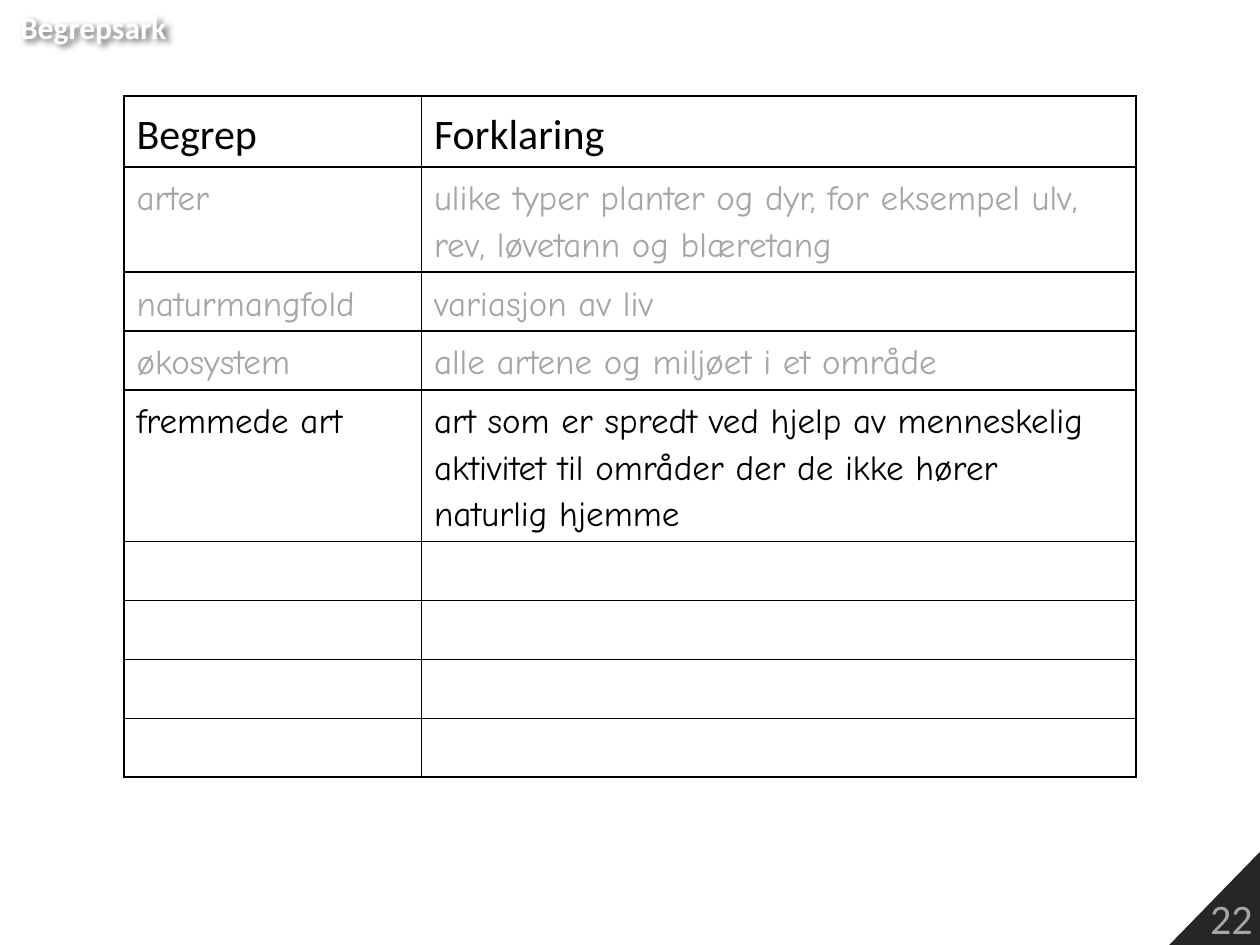
"""Build a glossary sheet with a two-column table of terms and a page-number corner."""
import dataclasses

import pptx
import pptx.dml.color
import pptx.enum.text
import pptx.oxml
import pptx.oxml.ns
import pptx.util

Pt = pptx.util.Pt
Align = pptx.enum.text.PP_ALIGN
Anchor = pptx.enum.text.MSO_ANCHOR


@dataclasses.dataclass(frozen=True)
class Theme:
    black: str = "000000"
    white: str = "FFFFFF"
    muted: str = "A6A6A6"
    corner: str = "262626"
    heading_font: str = "Calibri"
    body_font: str = "Comic Neue"
    heading_size: int = 24
    body_size: int = 20
    title_size: int = 18
    border: int = 1


THEME = Theme()
HEADER = ("Begrep", "Forklaring")
KNOWN_TERMS = [
    ("arter", "ulike typer planter og dyr, for eksempel ulv, rev, løvetann og blæretang"),
    ("naturmangfold", "variasjon av liv"),
    ("økosystem", "alle artene og miljøet i et område"),
]
NEW_TERMS = [
    ("fremmede art", "art som er spredt ved hjelp av menneskelig aktivitet "
                     "til områder der de ikke hører naturlig hjemme"),
]
EMPTY_ROWS = 4
COLUMN_WIDTHS = (170, 408.4)
ROW_HEIGHTS = [40.6, 60.2, 33.7, 33.7, 86.5] + [33.7] * EMPTY_ROWS
HEADER_CELL = {"vertical_anchor": Anchor.MIDDLE}
TERM_CELL = {"vertical_anchor": Anchor.TOP, "margin_bottom": Pt(0), "margin_right": Pt(10)}


def rgb(value):
    return pptx.dml.color.RGBColor.from_string(value)


def set_attributes(target, values):
    for name, value in values.items():
        setattr(target, name, value)


def write_text(frame, text, font, size, color, bold=False, **paragraph_format):
    para = frame.paragraphs[0]
    set_attributes(para, paragraph_format)
    span = para.add_run()
    span.text = text
    set_attributes(span.font, {"name": font, "size": Pt(size), "bold": bold})
    span.font.color.rgb = rgb(color)


def add_soft_shadow(box):
    box.fill.background()
    box.line.fill.background()
    box._element.spPr.append(pptx.oxml.parse_xml(
        f'<a:effectLst {pptx.oxml.ns.nsdecls("a")}>'
        '<a:outerShdw blurRad="50800" dist="38100" dir="2700000" algn="tl" rotWithShape="0">'
        f'<a:srgbClr val="{THEME.black}"><a:alpha val="60000"/></a:srgbClr>'
        '</a:outerShdw></a:effectLst>'))


def add_title(page, text):
    title = page.shapes.title
    set_attributes(title, {"left": Pt(4.3), "top": Pt(0.7),
                           "width": Pt(98.6), "height": Pt(29)})
    set_attributes(title.text_frame, {
        "word_wrap": False, "vertical_anchor": Anchor.TOP,
        "auto_size": pptx.enum.text.MSO_AUTO_SIZE.SHAPE_TO_FIT_TEXT})
    write_text(title.text_frame, text, THEME.heading_font, THEME.title_size,
               THEME.white, bold=True, alignment=Align.LEFT)
    add_soft_shadow(title)


def add_page_corner(page, number):
    left, top, right, bottom = 666, 483.8, 722.9, 542.2
    builder = page.shapes.build_freeform(Pt(left), Pt(bottom))
    builder.add_line_segments([(Pt(right), Pt(top)), (Pt(right), Pt(bottom))])
    corner = builder.convert_to_shape()
    corner.shadow.inherit = False
    corner.fill.solid()
    corner.fill.fore_color.rgb = rgb(THEME.corner)
    corner.line.fill.background()
    set_attributes(corner.text_frame, {"word_wrap": True, "vertical_anchor": Anchor.BOTTOM})
    write_text(corner.text_frame, number, THEME.heading_font, THEME.heading_size,
               THEME.muted, alignment=Align.RIGHT)


def draw_borders(cell):
    properties = cell._tc.get_or_add_tcPr()
    for side in ("lnL", "lnR", "lnT", "lnB"):
        properties.append(pptx.oxml.parse_xml(
            f'<a:{side} {pptx.oxml.ns.nsdecls("a")} w="{Pt(THEME.border)}">'
            f'<a:solidFill><a:srgbClr val="{THEME.black}"/></a:solidFill></a:{side}>'))


def fill_row(row, texts, font, size, color, cell_format):
    for cell, text in zip(row.cells, texts):
        set_attributes(cell, cell_format)
        write_text(cell.text_frame, text, font, size, color, line_spacing=1.15)


def add_glossary(page):
    table = page.shapes.add_table(len(ROW_HEIGHTS), len(COLUMN_WIDTHS), Pt(70.8), Pt(54.8),
                                  Pt(sum(COLUMN_WIDTHS)), Pt(sum(ROW_HEIGHTS))).table
    set_attributes(table, {"first_row": False, "horz_banding": False})
    for column, width in zip(table.columns, COLUMN_WIDTHS):
        column.width = Pt(width)
    for row, height in zip(table.rows, ROW_HEIGHTS):
        row.height = Pt(height)
    for cell in table.iter_cells():
        draw_borders(cell)
        cell.fill.background()
    rows = iter(table.rows)
    fill_row(next(rows), HEADER, THEME.heading_font, THEME.heading_size,
             THEME.black, HEADER_CELL)
    for terms, color in ((KNOWN_TERMS, THEME.muted), (NEW_TERMS, THEME.black)):
        for term in terms:
            fill_row(next(rows), term, THEME.body_font, THEME.body_size, color, TERM_CELL)


def main():
    deck = pptx.Presentation()
    set_attributes(deck, {"slide_width": Pt(720), "slide_height": Pt(540)})
    page = deck.slides.add_slide(deck.slide_layouts.get_by_name("Title Only"))
    add_page_corner(page, "22")
    add_glossary(page)
    add_title(page, "Begrepsark")
    deck.save("out.pptx")


if __name__ == "__main__":
    main()
